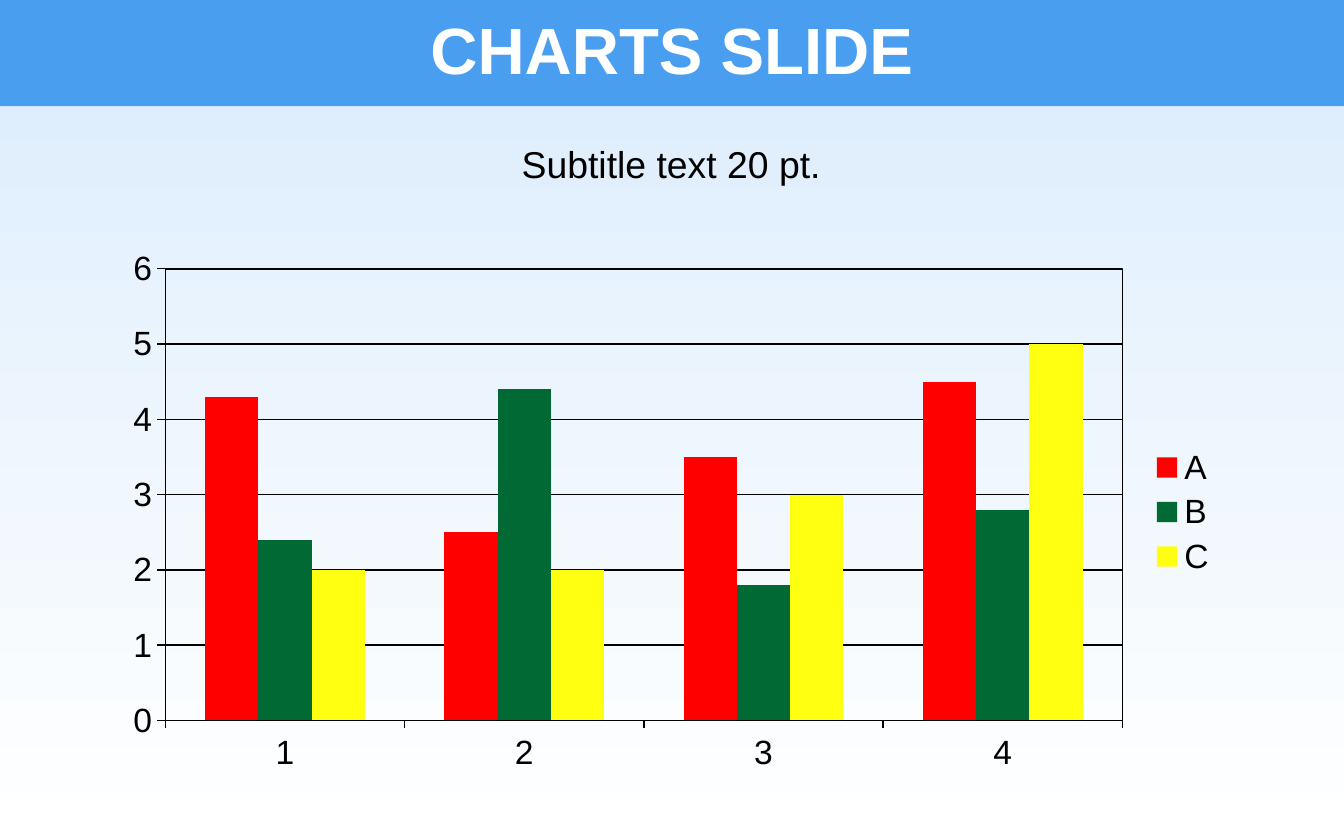
from dataclasses import dataclass

from lxml.etree import fromstring
from pptx import Presentation
from pptx.chart.chart import Chart
from pptx.chart.data import CategoryChartData
from pptx.dml.color import RGBColor
from pptx.enum.chart import XL_CHART_TYPE, XL_LEGEND_POSITION, XL_TICK_MARK
from pptx.enum.text import MSO_ANCHOR, MSO_AUTO_SIZE, PP_ALIGN
from pptx.oxml.ns import nsdecls, qn
from pptx.slide import Slide
from pptx.util import Inches, Pt

FONT = "Arial"
COLORS = {
    "sky": "DBECFC",
    "white": "FFFFFF",
    "banner": "4A9EF0",
    "black": "000000",
    "red": "FF0000",
    "green": "006934",
    "yellow": "FFFF11",
}
CATEGORIES = ["1", "2", "3", "4"]


@dataclass
class Series:
    name: str
    values: tuple[float, ...]
    color: str


@dataclass
class Heading:
    text: str
    box: tuple[float, float, float, float]
    size: int
    color: str
    bold: bool
    space_before: int


SERIES = [
    Series("A", (4.3, 2.5, 3.5, 4.5), "red"),
    Series("B", (2.4, 4.4, 1.8, 2.8), "green"),
    Series("C", (2, 2, 3, 5), "yellow"),
]
TITLE = Heading("CHARTS SLIDE", (0, 0, 10, 0.79), 35, "white", True, 0)
SUBTITLE = Heading("Subtitle text 20 pt.", (0.27, 1, 9.45, 0.47), 20, "black", False, 10)
PLOT_LAYOUT = {"x": 0.048, "y": 0.052, "w": 0.855, "h": 0.832}


def rgb(name: str) -> RGBColor:
    return RGBColor.from_string(COLORS[name])


def paint_background(slide: Slide) -> None:
    fill = slide.background.fill
    fill.gradient()
    fill.gradient_angle = 270
    for stop, name in zip(fill.gradient_stops, ("sky", "white")):
        stop.color.rgb = rgb(name)


def write_heading(shape, heading: Heading) -> None:
    shape.left, shape.top, shape.width, shape.height = map(Inches, heading.box)
    frame = shape.text_frame
    frame.text = heading.text
    frame.word_wrap = True
    frame.auto_size = MSO_AUTO_SIZE.NONE
    frame.vertical_anchor = MSO_ANCHOR.MIDDLE
    frame.margin_left = frame.margin_right = Inches(0.05)
    frame.margin_top = frame.margin_bottom = Inches(0.05)
    paragraph = frame.paragraphs[0]
    paragraph.alignment = PP_ALIGN.CENTER
    paragraph.line_spacing = 0.9
    paragraph.space_before = Pt(heading.space_before)
    font = paragraph.font
    font.name, font.size, font.bold = FONT, Pt(heading.size), heading.bold
    font.color.rgb = rgb(heading.color)


def draw_line(line) -> None:
    line.color.rgb = rgb("black")
    line.width = Pt(0.75)


def frame_plot(chart: Chart) -> None:
    plot_area = chart.plots[0]._element.getparent()
    for layout in plot_area.findall(qn("c:layout")):
        plot_area.remove(layout)
    modes = "".join(f'<c:{side}Mode val="edge"/>' for side in "xy")
    sizes = "".join(f'<c:{side} val="{value}"/>' for side, value in PLOT_LAYOUT.items())
    plot_area.insert(0, fromstring(
        f'<c:layout {nsdecls("c")}><c:manualLayout><c:layoutTarget val="inner"/>'
        f"{modes}{sizes}</c:manualLayout></c:layout>"
    ))
    plot_area.append(fromstring(
        f'<c:spPr {nsdecls("c", "a")}><a:noFill/><a:ln w="{Pt(0.75)}"><a:solidFill>'
        f'<a:srgbClr val="{COLORS["black"]}"/></a:solidFill></a:ln></c:spPr>'
    ))


def add_column_chart(slide: Slide) -> None:
    data = CategoryChartData()
    data.categories = CATEGORIES
    for series in SERIES:
        data.add_series(series.name, series.values)
    chart = slide.shapes.add_chart(
        XL_CHART_TYPE.COLUMN_CLUSTERED,
        Inches(0.83), Inches(1.79), Inches(8.33), Inches(4.04), data,
    ).chart
    chart.has_title = False
    chart.font.name, chart.font.size = FONT, Pt(18)
    chart.font.color.rgb = rgb("black")
    chart.has_legend = True
    chart.legend.position = XL_LEGEND_POSITION.RIGHT
    chart.legend.include_in_layout = False

    plot = chart.plots[0]
    plot.gap_width, plot.overlap = 150, 0
    plot.vary_by_categories = False
    for drawn, series in zip(plot.series, SERIES):
        drawn.format.fill.solid()
        drawn.format.fill.fore_color.rgb = rgb(series.color)

    for axis in (chart.category_axis, chart.value_axis):
        axis.major_tick_mark = XL_TICK_MARK.OUTSIDE
        axis.minor_tick_mark = XL_TICK_MARK.NONE
        draw_line(axis.format.line)
    values = chart.value_axis
    values.minimum_scale, values.maximum_scale, values.major_unit = 0, 6, 1
    values.has_major_gridlines = True
    draw_line(values.major_gridlines.format.line)
    frame_plot(chart)


def main() -> None:
    deck = Presentation()
    deck.slide_width, deck.slide_height = Inches(10), Inches(6.25)
    slide = deck.slides.add_slide(deck.slide_layouts[5])
    paint_background(slide)

    title = slide.shapes.title
    title.fill.solid()
    title.fill.fore_color.rgb = rgb("banner")
    write_heading(title, TITLE)
    write_heading(slide.shapes.add_textbox(0, 0, 0, 0), SUBTITLE)
    add_column_chart(slide)
    deck.save("out.pptx")


if __name__ == "__main__":
    main()
